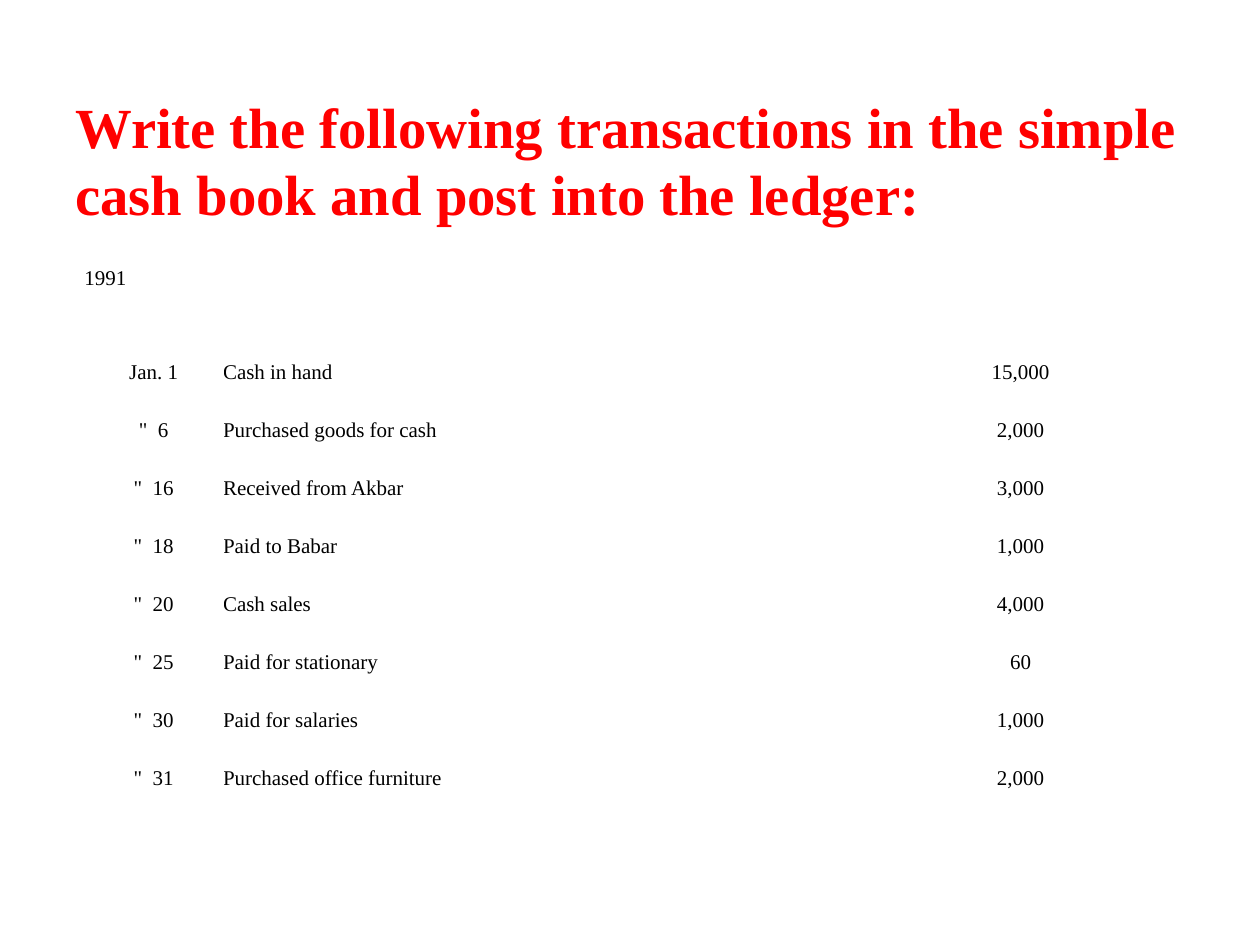
"""Build a slide listing cash book transactions under a red heading."""
from pptx import Presentation
from pptx.dml.color import RGBColor
from pptx.enum.text import MSO_ANCHOR, PP_ALIGN
from pptx.util import Inches, Pt

LEFT, CENTER = PP_ALIGN.LEFT, PP_ALIGN.CENTER
TOP, MIDDLE = MSO_ANCHOR.TOP, MSO_ANCHOR.MIDDLE
RED = RGBColor(0xFF, 0x00, 0x00)
BLACK = RGBColor(0x00, 0x00, 0x00)

HEADING = "Write the following transactions in the simple cash book and post into the ledger:"
YEAR = "1991"
TRANSACTIONS = [
    ("Jan. 1", "Cash in hand", "15,000"),
    ("\"  6", "Purchased goods for cash", "2,000"),
    ("\"  16", "Received from Akbar", "3,000"),
    ("\"  18", "Paid to Babar", "1,000"),
    ("\"  20", "Cash sales", "4,000"),
    ("\"  25", "Paid for stationary", "60"),
    ("\"  30", "Paid for salaries", "1,000"),
    ("\"  31", "Purchased office furniture", "2,000"),
]
COLUMN_WIDTHS = (1.1, 5.27, 2.12)
COLUMN_ALIGNS = (CENTER, LEFT, CENTER)
YEAR_HEIGHT, ROW_HEIGHT = 0.92, 0.46
YEAR_OFFSET = 0.17

HEADING_FONT = {"name": "Times New Roman", "size": Pt(32.4), "bold": True}
BODY_FONT = {"name": "Times New Roman", "size": Pt(12), "bold": False}
NO_MARGINS = {"margin_left": 0, "margin_right": 0, "margin_top": 0, "margin_bottom": 0}


def apply(target, values):
    for name, value in values.items():
        setattr(target, name, value)


def write(frame, text, font, color, align, spacing):
    para = frame.paragraphs[0]
    apply(para, {"alignment": align, "line_spacing": spacing})
    span = para.add_run()
    span.text = text
    apply(span.font, font)
    span.font.color.rgb = color


def add_heading(page):
    box = page.shapes.add_textbox(Inches(0.5), Inches(0.69), Inches(9), Inches(1.16))
    apply(box.text_frame, {"word_wrap": True, "vertical_anchor": MIDDLE})
    write(box.text_frame, HEADING, HEADING_FONT, RED, LEFT, Pt(38.3))


def add_transactions(page):
    rows = [(YEAR, "", "")] + TRANSACTIONS
    heights = [YEAR_HEIGHT] + [ROW_HEIGHT] * len(TRANSACTIONS)
    table = page.shapes.add_table(
        len(rows), len(COLUMN_WIDTHS), Inches(0.67), Inches(1.92),
        Inches(sum(COLUMN_WIDTHS)), Inches(sum(heights)),
    ).table
    apply(table, {"first_row": False, "horz_banding": False})
    for column, width in zip(table.columns, COLUMN_WIDTHS):
        column.width = Inches(width)
    for row, height, texts in zip(table.rows, heights, rows):
        row.height = Inches(height)
        for cell, text, align in zip(row.cells, texts, COLUMN_ALIGNS):
            apply(cell, NO_MARGINS)
            cell.vertical_anchor = TOP
            cell.fill.background()
            if text:
                write(cell.text_frame, text, BODY_FONT, BLACK, align, 1.15)
    year_cell = table.cell(0, 0)
    year_cell.margin_top = Inches(YEAR_OFFSET)
    year_cell.text_frame.paragraphs[0].alignment = LEFT


def main():
    deck = Presentation()
    apply(deck, {"slide_width": Inches(10), "slide_height": Inches(7.5)})
    page = deck.slides.add_slide(deck.slide_layouts[6])
    add_heading(page)
    add_transactions(page)
    deck.save("out.pptx")


if __name__ == "__main__":
    main()
